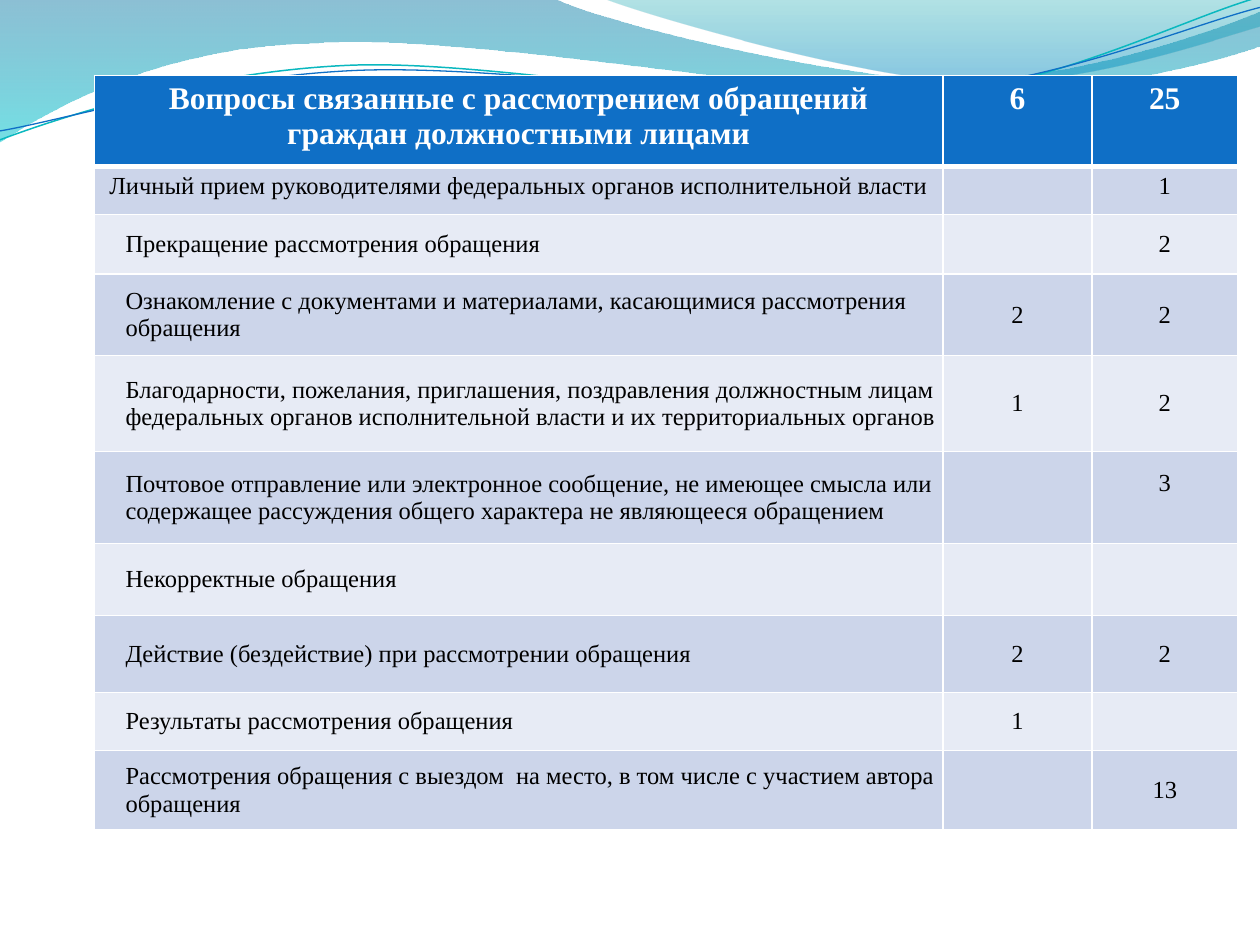
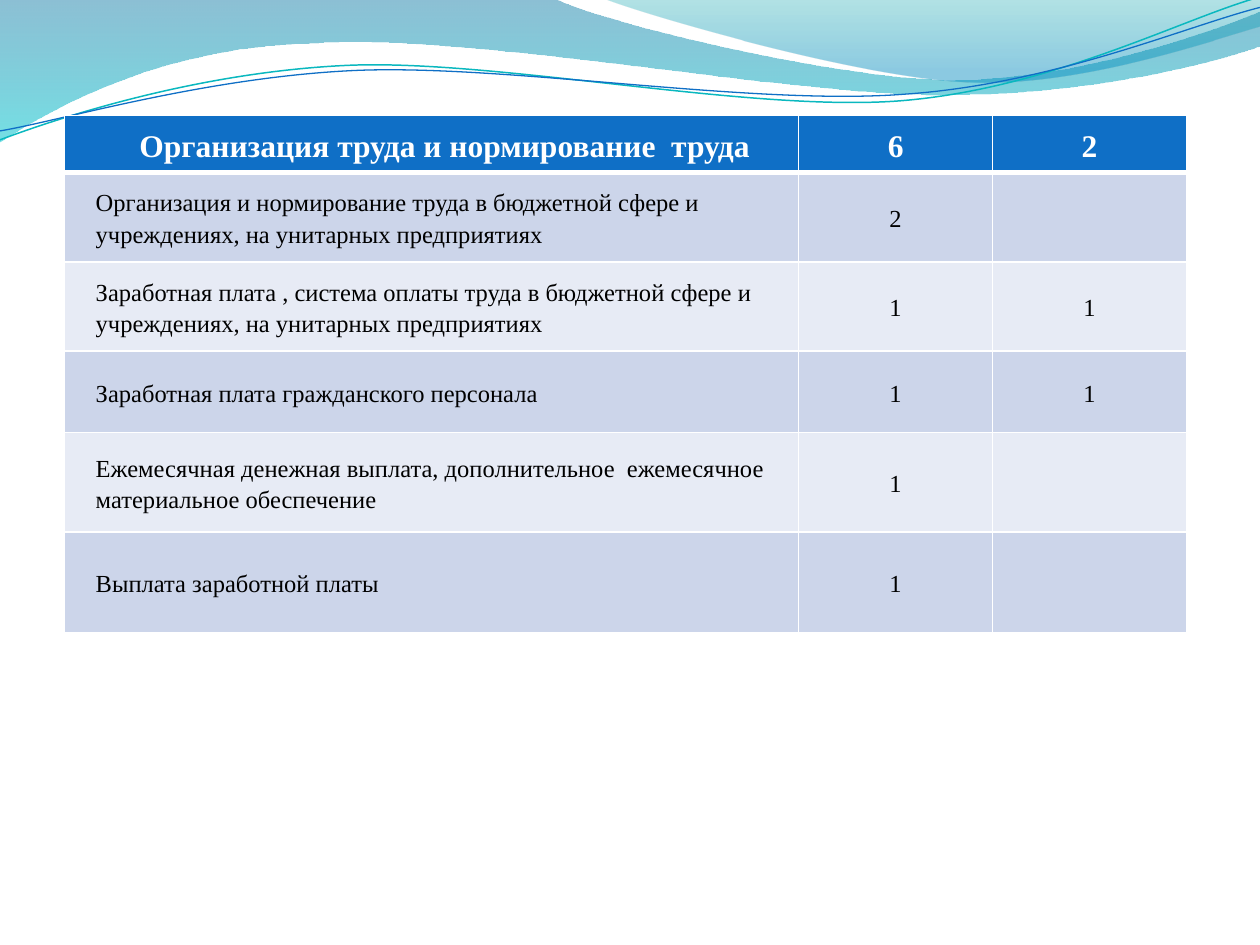
"""Builds two slides with tables of citizens' appeals under a shared wave banner."""
import pptx
import pptx.dml.color
import pptx.enum.text
import pptx.oxml
import pptx.oxml.ns
import pptx.util

Cm = pptx.util.Cm
Pt = pptx.util.Pt
RGBColor = pptx.dml.color.RGBColor
qn = pptx.oxml.ns.qn

FONT = "Times New Roman"
WHITE = RGBColor(0xFF, 0xFF, 0xFF)
BLACK = RGBColor(0x00, 0x00, 0x00)
BLUE = RGBColor(0x0F, 0x6F, 0xC6)
TEAL = RGBColor(0x0A, 0xB8, 0xBF)
DARK_BAND = RGBColor(0xCC, 0xD5, 0xEA)
LIGHT_BAND = RGBColor(0xE7, 0xEB, 0xF5)
DEEP_SEA = RGBColor(0x00, 0x74, 0xA1)
AQUA = RGBColor(0x00, 0xC6, 0xCF)
LAGOON = RGBColor(0x00, 0xA1, 0xA9)
SKY = RGBColor(0x00, 0x8B, 0xBF)
STRAND_ROTATION = 357.3

WIDE_WAVE = [
    [(0, 0)], [(11.18, -0.03)],
    [(12.09, 0.43), (16.87, 1.6), (19.25, 1.6)],
    [(21.67, 1.6), (24.33, 0.66), (25.4, 0.23)],
    [(25.43, 0.91)],
    [(24.97, 1.12), (22.1, 1.93), (18.95, 1.91)],
    [(15.8, 1.91), (9.7, 0.71), (6.53, 0.86)],
    [(3.28, 0.91), (1.17, 2.11), (-0.03, 2.87)],
    [(0, 0)],
]
RIGHT_WAVE = [
    [(12.17, -0.03)],
    [(12.93, 0.28), (17.32, 1.57), (19.53, 1.65)],
    [(21.74, 1.75), (24.41, 0.81), (25.4, 0.53)],
    [(25.4, 0)], [(12.17, -0.03)],
]
TEAL_LINE = [
    [(-0.05, 2.22)],
    [(1.19, 1.82), (4.02, 1.04), (7.05, 1.05)],
    [(10.05, 1.07), (15.02, 2.37), (18.08, 2.29)],
    [(21.13, 2.2), (23.86, 0.91), (25.41, 0.55)],
]
BLUE_LINE = [
    [(-0.04, 2.04)],
    [(1.16, 1.9), (4.17, 1.15), (7.2, 1.16)],
    [(10.25, 1.18), (15.13, 2.25), (18.19, 2.16)],
    [(21.22, 2.1), (23.93, 1.06), (25.45, 0.75)],
]

TABLES = [
    {
        "position": (1.9, 1.52),
        "columns": [17.11, 3, 2.94],
        "heights": [1.83, 0.97, 1.2, 1.65, 1.93, 1.86, 1.45, 1.55, 1.17, 1.6],
        "top_rows": 2,
        "spacing": None,
        "raised": (5, 2),
        "rows": [
            ("Вопросы связанные с рассмотрением обращений граждан должностными лицами", "6", "25"),
            ("Личный прием руководителями федеральных органов исполнительной власти", "", "1"),
            ("Прекращение рассмотрения обращения", "", "2"),
            ("Ознакомление с документами и материалами, касающимися рассмотрения обращения", "2", "2"),
            ("Благодарности, пожелания, приглашения, поздравления должностным лицам "
             "федеральных органов исполнительной власти и их территориальных органов", "1", "2"),
            ("Почтовое отправление или электронное сообщение, не имеющее смысла или "
             "содержащее рассуждения общего характера не являющееся обращением", "", "3"),
            ("Некорректные обращения", "", ""),
            ("Действие (бездействие) при рассмотрении обращения", "2", "2"),
            ("Результаты рассмотрения обращения", "1", ""),
            ("Рассмотрения обращения с выездом  на место, в том числе с участием автора обращения",
             "", "13"),
        ],
    },
    {
        "position": (1.3, 2.33),
        "columns": [14.8, 3.91, 3.91],
        "heights": [1.15, 1.8, 1.8, 1.64, 2.01, 2.02],
        "top_rows": 0,
        "spacing": 1.15,
        "raised": None,
        "rows": [
            ("Организация труда и нормирование  труда", "6", "2"),
            ("Организация и нормирование труда в бюджетной сфере и учреждениях, "
             "на унитарных предприятиях", "2", ""),
            ("Заработная плата , система оплаты труда в бюджетной сфере и учреждениях, "
             "на унитарных предприятиях", "1", "1"),
            ("Заработная плата гражданского персонала", "1", "1"),
            ("Ежемесячная денежная выплата, дополнительное  ежемесячное материальное обеспечение",
             "1", ""),
            ("Выплата заработной платы", "1", ""),
        ],
    },
]


def draw_curve(slide, segments, closed):
    points = [(Cm(x), Cm(y)) for segment in segments for x, y in segment]
    builder = slide.shapes.build_freeform(*points[0])
    builder.add_line_segments(points[1:], close=closed)
    shape = builder.convert_to_shape()
    shape.shadow.inherit = False
    lines = iter(list(shape.element.iter(qn("a:lnTo"))))
    for segment in segments[1:]:
        corners = [next(lines) for _ in segment]
        if len(corners) == 3:
            curve = pptx.oxml.parse_xml(f'<a:cubicBezTo {pptx.oxml.ns.nsdecls("a")}/>')
            corners[0].addprevious(curve)
            for corner in corners:
                curve.append(corner[0])
                corner.getparent().remove(corner)
    return shape


def set_borders(cell, widths):
    properties = cell._tc.get_or_add_tcPr()
    for index, (side, width) in enumerate(widths.items()):
        properties.insert(index, pptx.oxml.parse_xml(
            f'<a:ln{side} {pptx.oxml.ns.nsdecls("a")} w="{Pt(width)}">'
            f'<a:solidFill><a:srgbClr val="{WHITE}"/></a:solidFill></a:ln{side}>'))


presentation = pptx.Presentation()
presentation.slide_width = Cm(25.4)
presentation.slide_height = Cm(19.05)
layout = presentation.slide_layouts[6]
slides = [presentation.slides.add_slide(layout) for _ in TABLES]

banner = []
for segments, stops in (
    (WIDE_WAVE, [(0, DEEP_SEA, 45), (1, AQUA, 55)]),
    (RIGHT_WAVE, [(0, LAGOON, 30), (0.8, SKY, 45)]),
):
    wave = draw_curve(slides[0], segments, True)
    wave.line.fill.background()
    wave.fill.gradient()
    wave.fill.gradient_angle = 270
    for stop, (position, color, _) in zip(wave.fill.gradient_stops, stops):
        stop.position = position
        stop.color.rgb = color
    for color_element, (_, _, opacity) in zip(wave.element.spPr.iter(qn("a:srgbClr")), stops):
        color_element.append(pptx.oxml.parse_xml(
            f'<a:alpha {pptx.oxml.ns.nsdecls("a")} val="{opacity * 1000}"/>'))
    banner.append(wave)

for segments, color, width in ((TEAL_LINE, TEAL, 0.85), (BLUE_LINE, BLUE, 0.75)):
    strand = draw_curve(slides[0], segments, False)
    strand.rotation = STRAND_ROTATION
    strand.fill.background()
    strand.line.color.rgb = color
    strand.line.width = Pt(width)
    banner.append(strand)

for shape in banner:
    layout.shapes.element.append(shape.element)

for slide, content in zip(slides, TABLES):
    left, top = content["position"]
    rows, columns, heights = content["rows"], content["columns"], content["heights"]
    table = slide.shapes.add_table(
        len(rows), len(columns), Cm(left), Cm(top), Cm(sum(columns)), Cm(sum(heights))).table
    table.horz_banding = False
    for column, width in zip(table.columns, columns):
        column.width = Cm(width)
    for row_index, (row, height, texts) in enumerate(zip(table.rows, heights, rows)):
        row.height = Cm(height)
        is_header = row_index == 0
        at_top = row_index < content["top_rows"]
        for column_index, (cell, text) in enumerate(zip(row.cells, texts)):
            cell.text = text
            cell.fill.solid()
            cell.fill.fore_color.rgb = (
                BLUE if is_header else DARK_BAND if row_index % 2 else LIGHT_BAND)
            set_borders(cell, {"L": 1, "R": 1, "T": 3 if row_index == 1 else 1,
                               "B": 3 if is_header else 1})
            if not at_top:
                cell.vertical_anchor = pptx.enum.text.MSO_ANCHOR.MIDDLE
                cell.margin_left = Cm(0.1 if column_index else 0.63)
                cell.margin_right = cell.margin_top = cell.margin_bottom = Cm(0.1)
            if (row_index, column_index) == content["raised"]:
                cell.margin_bottom = Cm(0.66)
            paragraph = cell.text_frame.paragraphs[0]
            paragraph.line_spacing = content["spacing"]
            if column_index or is_header or at_top:
                paragraph.alignment = pptx.enum.text.PP_ALIGN.CENTER
            paragraph.font.name = FONT
            paragraph.font.size = Pt(18 if is_header else 14)
            paragraph.font.bold = is_header
            paragraph.font.color.rgb = WHITE if is_header else BLACK

presentation.save("out.pptx")
